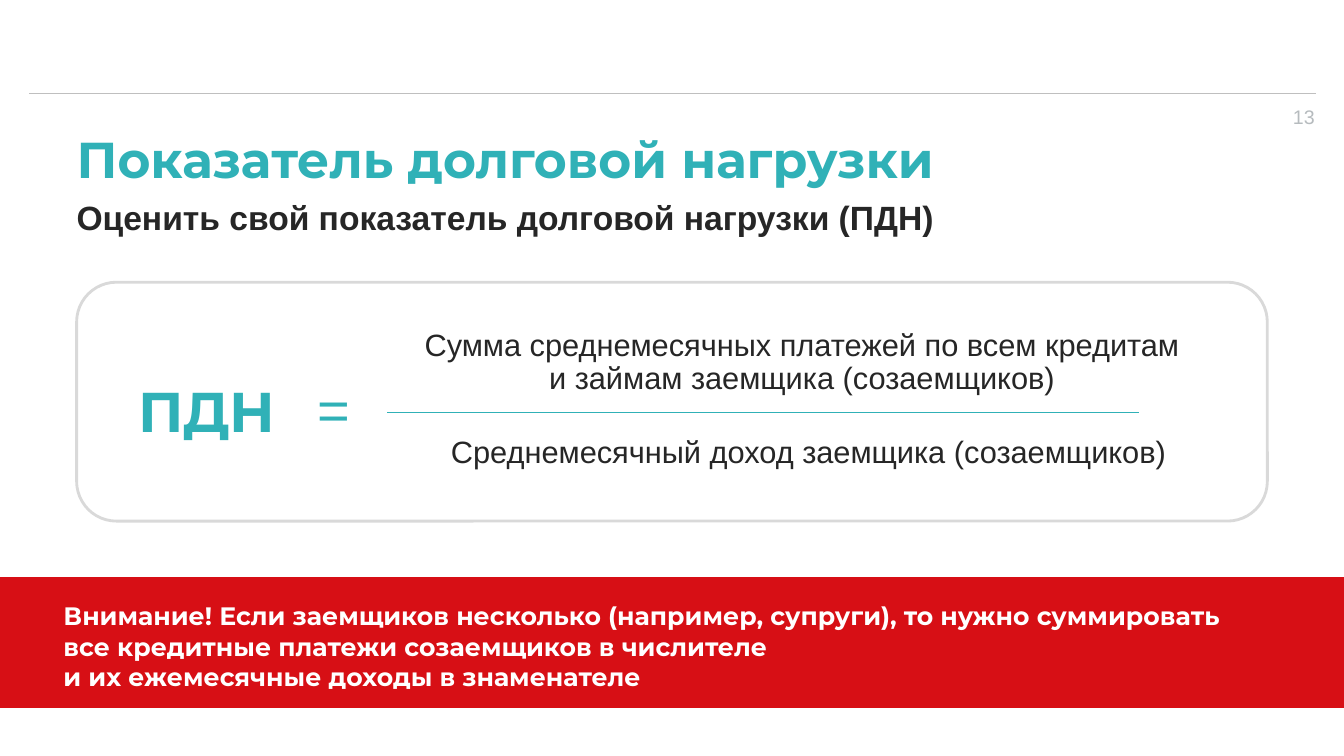
import pptx
import pptx.util
import pptx.dml.color
import pptx.enum.shapes
import pptx.enum.text
from dataclasses import dataclass
from lxml import etree

Inches = pptx.util.Inches
Pt = pptx.util.Pt
Shape = pptx.enum.shapes.MSO_SHAPE
Align = pptx.enum.text.PP_ALIGN
Anchor = pptx.enum.text.MSO_ANCHOR


@dataclass(frozen=True)
class Theme:
    head: str = "Montserrat"
    body: str = "Arial"
    teal: str = "30B1B7"
    dark: str = "262626"
    red: str = "D70F15"
    white: str = "FFFFFF"
    rule: str = "BFBFBF"
    frame: str = "D9D9D9"
    pale: str = "B6BBBE"
    title: int = 36
    sub: int = 24
    sign: int = 40
    term: int = 22
    note: int = 18
    page: int = 14


def tint(code):
    return pptx.dml.color.RGBColor.from_string(code)


class Board:
    def __init__(self, slide, theme):
        self.slide = slide
        self.theme = theme

    def text(self, box, lines, size, color, font=None, bold=False,
             align=Align.LEFT, anchor=Anchor.TOP, space=1.0, after=0):
        item = self.slide.shapes.add_textbox(*map(Inches, box))
        frame = item.text_frame
        frame.word_wrap = True
        frame.vertical_anchor = anchor
        frame.margin_left = frame.margin_right = 0
        frame.margin_top = frame.margin_bottom = 0
        para = frame.paragraphs[0]
        para.alignment = align
        para.line_spacing = space
        para.space_after = Pt(after)
        for num, line in enumerate(lines):
            if num:
                para.add_line_break()
            run = para.add_run()
            run.text = line
            run.font.name = font or self.theme.body
            run.font.size = Pt(size)
            run.font.bold = bold
            run.font.color.rgb = tint(color)

    def shape(self, kind, box, fill=None, line=None, width=1):
        item = self.slide.shapes.add_shape(kind, *map(Inches, box))
        item.shadow.inherit = False
        if fill:
            item.fill.solid()
            item.fill.fore_color.rgb = tint(fill)
        else:
            item.fill.background()
        if line:
            item.line.color.rgb = tint(line)
            item.line.width = Pt(width)
        else:
            item.line.fill.background()

    def rule(self, left, right, top, color):
        item = self.slide.shapes.add_connector(
            pptx.enum.shapes.MSO_CONNECTOR.STRAIGHT,
            Inches(left), Inches(top), Inches(right), Inches(top))
        item.line.color.rgb = tint(color)
        item.line.width = Pt(1)
        props = item._element.spPr
        etree.SubElement(props, pptx.oxml.ns.qn("a:effectLst"))


def main():
    deck = pptx.Presentation()
    deck.slide_width = Inches(13.33)
    deck.slide_height = Inches(7.5)
    look = Theme()
    board = Board(deck.slides.add_slide(deck.slide_layouts[6]), look)

    board.rule(0.29, 13.05, 0.93, look.rule)
    board.text((0.76, 1.27, 9.97, 0.61), ["Показатель долговой нагрузки"],
               look.title, look.teal, look.head, True)
    board.text((0.76, 1.83, 9.13, 0.47),
               ["Оценить свой показатель долговой нагрузки (ПДН)"],
               look.sub, look.dark, bold=True, space=1.3, after=6)

    board.shape(Shape.ROUNDED_RECTANGLE, (0.76, 2.8, 11.81, 2.37),
                line=look.frame, width=2)
    board.text((1.37, 3, 1.54, 2.22), ["ПДН"], look.sign, look.teal,
               look.head, True, anchor=Anchor.MIDDLE, space=0.9)
    terms = [
        ((4.12, 3.27, 7.67, 0.71),
         "Сумма среднемесячных платежей по всем кредитам "
         "и займам заемщика (созаемщиков)"),
        ((4.24, 4.33, 7.56, 0.36),
         "Среднемесячный доход заемщика (созаемщиков)"),
    ]
    for box, term in terms:
        board.text(box, [term], look.term, look.dark,
                   align=Align.CENTER, space=0.9)
    board.text((2.5, 2.97, 1.62, 2.25), ["="], look.sign, look.teal,
               align=Align.CENTER, anchor=Anchor.MIDDLE, space=0.9)
    board.rule(3.84, 11.3, 4.09, look.teal)

    board.shape(Shape.FLOWCHART_PROCESS, (0, 5.72, 13.33, 1.3), look.red)
    board.text((0.63, 5.96, 11.94, 0.91),
               ["Внимание! Если заемщиков несколько (например, супруги), "
                "то нужно суммировать все кредитные платежи созаемщиков "
                "в числителе",
                "и их ежемесячные доходы в знаменателе"],
               look.note, look.white, look.head, True, after=3)
    board.text((12.56, 1.04, 0.48, 0.24), ["13"], look.page, look.pale,
               align=Align.RIGHT, after=9)

    deck.save("out.pptx")


if __name__ == "__main__":
    main()
